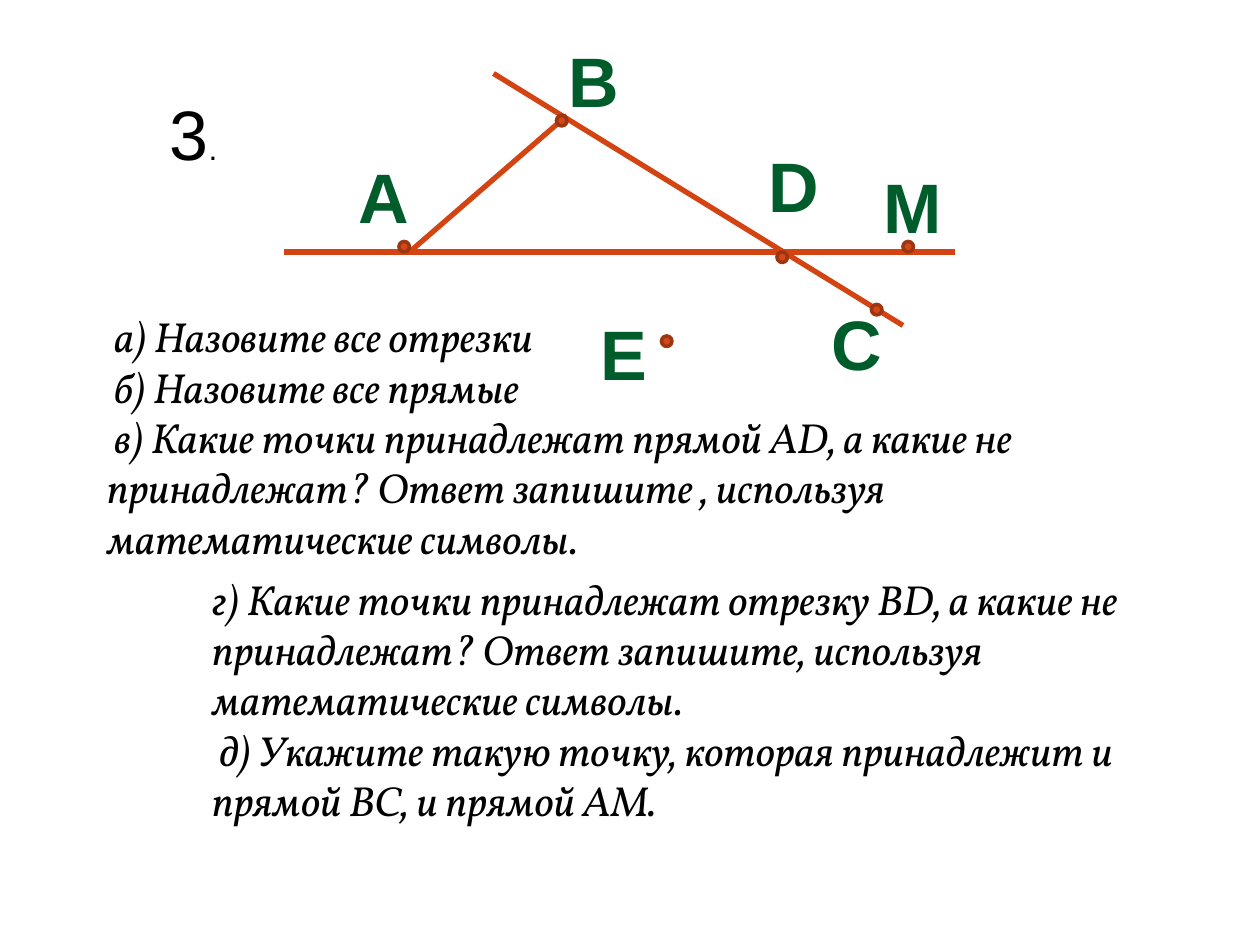
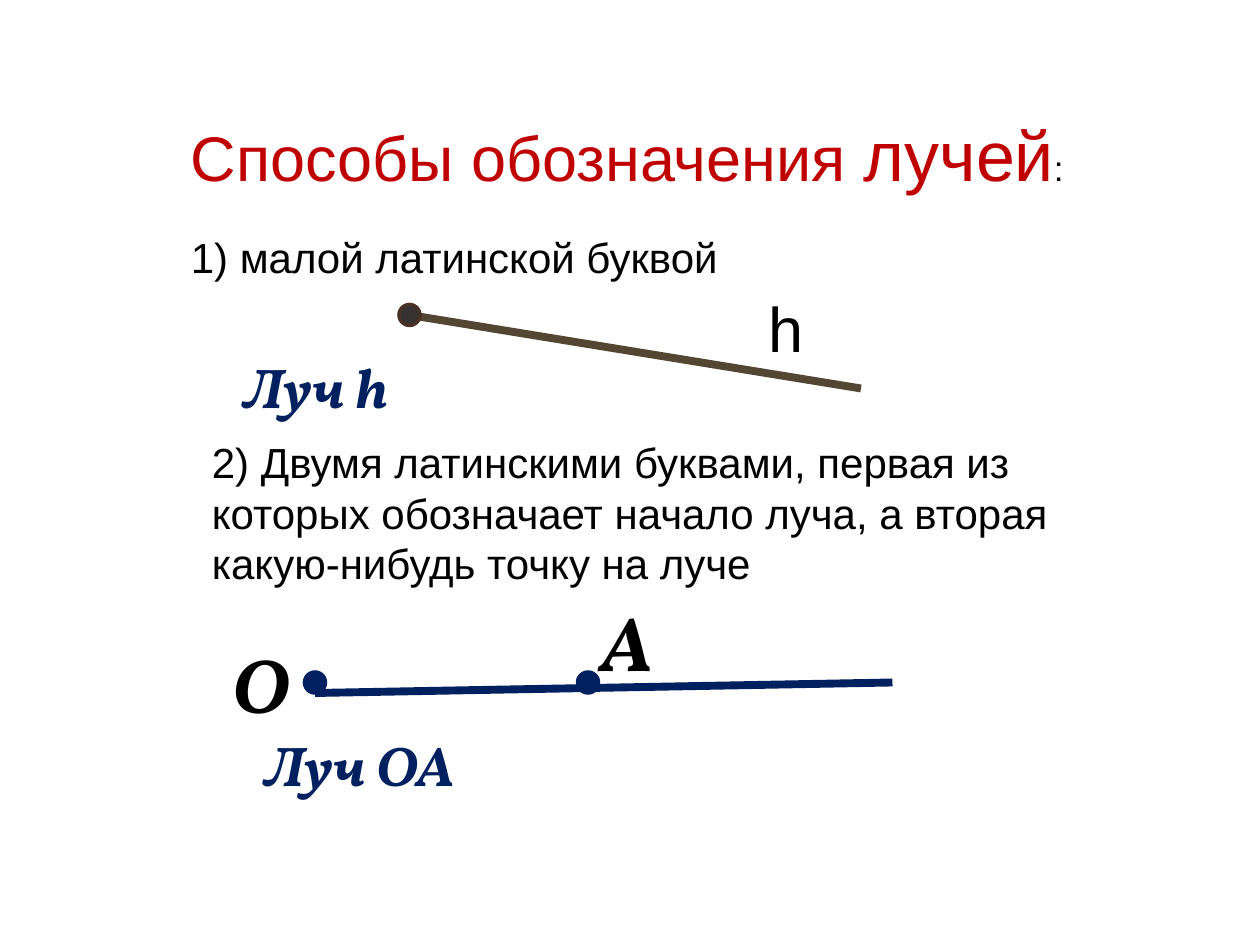
from lxml.etree import SubElement
from pptx import Presentation
from pptx.dml.color import RGBColor
from pptx.enum.shapes import MSO_CONNECTOR, MSO_SHAPE
from pptx.oxml.ns import qn
from pptx.util import Pt

COLORS = {
    "black": "000000", "green": "005C2A", "red": "C00000", "navy": "002060",
    "orange": "D34412", "dot": "D34817", "dot edge": "9C3511",
    "brown": "534733", "origin": "353232", "origin edge": "4A3128",
}

# Text styles: font, size, colour, bold, italic
STYLES = {
    "number": ("Arial", 40, "black", False, False),
    "full stop": ("Arial", 18, "black", False, False),
    "point name": ("Arial", 40, "green", True, False),
    "question": ("Vollkorn", 24, "black", False, True),
    "title": ("Arial", 36, "red", False, False),
    "title accent": ("Arial", 40, "red", False, False),
    "colon": ("Arial", 20, "black", False, False),
    "rule": ("Arial", 24, "black", False, False),
    "small name": ("Arial", 36, "black", False, False),
    "ray caption": ("Vollkorn", 32, "navy", True, True),
    "ray point": ("Vollkorn", 44, "black", True, True),
}

# Slide 1: geometry exercise
TASK_LINES = [  # start, end
    ((282, 42), (516, 186)),
    ((162, 144), (546, 144)),
    ((324, 66), (234, 144)),
]
TASK_POINTS = [  # name, name box (left, top, width), dot centre
    ("В", (318, 18, 44), (321, 69)),
    ("Е", (336, 174, 42), (381, 195)),
    ("А", (198, 84, 44), (231, 141)),
    ("D", (432, 78, 44), (447, 147)),
    ("M", (498, 90, 48), (519, 141)),
    ("C", (468, 168, 44), (501, 177)),
]
QUESTIONS = [  # box, paragraphs
    ((54, 174, 618, 153), [
        " а) Назовите все отрезки",
        " б) Назовите все прямые",
        " в) Какие точки принадлежат прямой AD, а какие не принадлежат? "
        "Ответ запишите , используя математические символы.",
    ]),
    ((114, 324, 540, 153), [
        "г) Какие точки принадлежат отрезку ВD, а какие не принадлежат? "
        "Ответ запишите, используя математические символы.",
        " д) Укажите такую точку, которая принадлежит и прямой ВС, и прямой АМ.",
    ]),
]

# Slide 2: ways to name a ray
HEADING = [
    [("Способы обозначения ", "title"), ("лучей", "title accent"), (":", "colon")],
    [("1) малой латинской буквой", "rule")],
]
SECOND_RULE = ("2) Двумя латинскими буквами, первая из которых обозначает "
               "начало луча, а вторая какую-нибудь точку на луче")
RAYS = [  # start, end, line colour, dot fill, dot edge, dot centres
    ((234, 180), (492, 222), "brown", "origin", "origin edge", [(234, 180)]),
    ((180, 396), (510, 390), "navy", "navy", "navy", [(336, 390), (180, 390)]),
]
RAY_LABELS = [  # text, style, box
    ("h", "small name", (432, 162, 34.5, 51)),
    ("Луч h", "ray caption", (132, 198, 103, 46)),
    ("О", "ray point", (126, 360, 47, 60.5)),
    ("А", "ray point", (336, 336, 44, 60.5)),
    ("Луч ОА", "ray caption", (144, 414, 128, 46)),
]


def color(name):
    return RGBColor.from_string(COLORS[name])


def add_text(page, place, paragraphs, wrap=False, gap=0):
    """Each paragraph is a list of (text, style); gap separates paragraphs."""
    box = page.shapes.add_textbox(*map(Pt, place))
    frame = box.text_frame
    frame.word_wrap = wrap
    for index, runs in enumerate(paragraphs):
        para = frame.add_paragraph() if index else frame.paragraphs[0]
        if index and gap:
            para.space_before = Pt(gap)
        for text, style in runs:
            span = para.add_run()
            span.text = text
            font = span.font
            font.name, size, shade, font.bold, font.italic = STYLES[style]
            font.size = Pt(size)
            font.color.rgb = color(shade)


def add_line(page, start, end, shade, width):
    line = page.shapes.add_connector(MSO_CONNECTOR.STRAIGHT, *map(Pt, start + end))
    line.line.color.rgb = color(shade)
    line.line.width = Pt(width)
    SubElement(line._element.spPr, qn("a:effectLst"))


def add_dot(page, center, size, fill, edge):
    left, top = (value - size / 2 for value in center)
    dot = page.shapes.add_shape(MSO_SHAPE.OVAL, *map(Pt, (left, top, size, size)))
    dot.shadow.inherit = False
    dot.fill.solid()
    dot.fill.fore_color.rgb = color(fill)
    dot.line.color.rgb = color(edge)
    dot.line.width = Pt(2)


def build_task(page):
    for start, end in TASK_LINES:
        add_line(page, start, end, "orange", 3)
    for name, place, center in TASK_POINTS:
        add_dot(page, center, 6, "dot", "dot edge")
        add_text(page, (*place, 55.5), [[(name, "point name")]])
    add_text(page, (90, 48, 42, 55.5), [[("3", "number"), (".", "full stop")]], wrap=True)
    for place, paragraphs in QUESTIONS:
        add_text(page, place, [[(text, "question")] for text in paragraphs], wrap=True)


def build_rays(page):
    add_text(page, (102, 60, 518, 106.5), HEADING, gap=20.7)
    add_text(page, (114, 246, 513, 94), [[(SECOND_RULE, "rule")]], wrap=True)
    for start, end, shade, fill, edge, centers in RAYS:
        add_line(page, start, end, shade, 4.5)
        for center in centers:
            add_dot(page, center, 12, fill, edge)
    for text, style, place in RAY_LABELS:
        add_text(page, place, [[(text, style)]])


def main():
    deck = Presentation()
    deck.slide_width, deck.slide_height = Pt(720), Pt(540)
    for build in (build_task, build_rays):
        build(deck.slides.add_slide(deck.slide_layouts[6]))
    deck.save("out.pptx")


if __name__ == "__main__":
    main()
